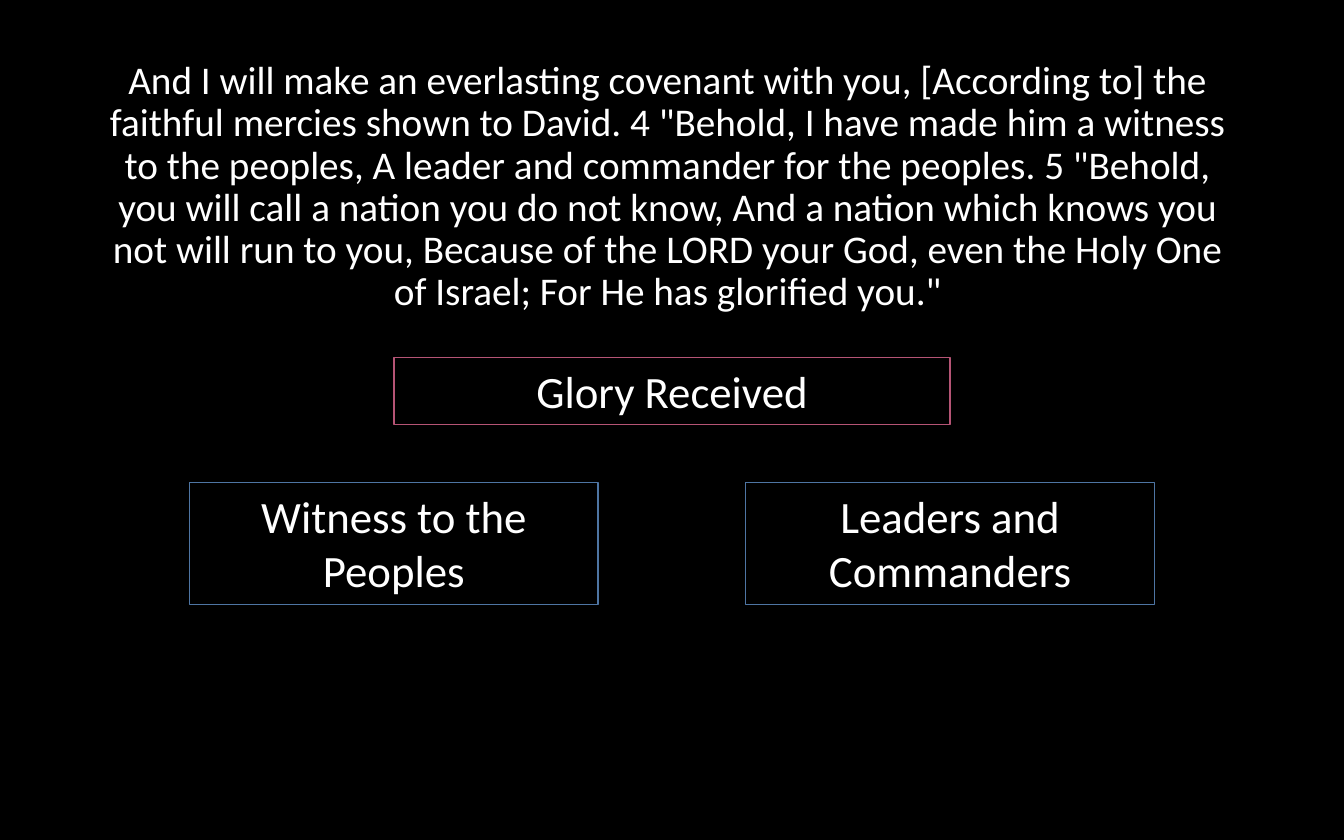
from pptx import Presentation
from pptx.dml.color import RGBColor
from pptx.enum.shapes import MSO_SHAPE
from pptx.enum.text import MSO_ANCHOR, MSO_AUTO_SIZE, PP_ALIGN
from pptx.oxml.ns import qn
from pptx.util import Pt

HUES = {"back": "000000", "text": "FFFFFF", "rose": "B55475", "blue": "4E75A3"}
WIDE, HIGH = 720, 450


def hue(name):
    return RGBColor.from_string(HUES[name])


def style(frame, size):
    """Format the centred white text of a frame."""
    frame.word_wrap = True
    frame.auto_size = MSO_AUTO_SIZE.NONE
    frame.vertical_anchor = MSO_ANCHOR.TOP
    for para in frame.paragraphs:
        para.alignment = PP_ALIGN.CENTER
        for run in para.runs:
            run.font.name = "Calibri"
            run.font.size = Pt(size)
            run.font.color.rgb = hue("text")


def add_verse(slide, text, left, top, width, height):
    """Place the scripture in the body placeholder."""
    body = slide.placeholders[1]
    body.left, body.top = Pt(left), Pt(top)
    body.width, body.height = Pt(width), Pt(height)
    body.text_frame.text = text
    para = body.text_frame.paragraphs[0]
    props = para._p.get_or_add_pPr()
    props.set("marL", "0")
    props.set("indent", "0")
    props.append(props.makeelement(qn("a:buNone"), {}))
    para.line_spacing = 0.9
    para.space_before = Pt(0)
    style(body.text_frame, 21)


def add_label(slide, text, edge, left, top, width, height):
    """Draw one outlined label."""
    box = slide.shapes.add_shape(
        MSO_SHAPE.RECTANGLE, Pt(left), Pt(top), Pt(width), Pt(height))
    box.shadow.inherit = False
    box.fill.background()
    box.line.color.rgb = hue(edge)
    box.line.width = Pt(0.75)
    box.text_frame.text = text
    style(box.text_frame, 24)


def add_row(slide, texts, edge, top, width, height, gap=0):
    """Centre a row of equal labels on the slide."""
    left = (WIDE - len(texts) * width - (len(texts) - 1) * gap) / 2
    for i, text in enumerate(texts):
        add_label(slide, text, edge, left + i * (width + gap), top, width, height)


def main():
    deck = Presentation()
    deck.slide_width, deck.slide_height = Pt(WIDE), Pt(HIGH)
    slide = deck.slides.add_slide(deck.slide_layouts[1])
    slide.background.fill.solid()
    slide.background.fill.fore_color.rgb = hue("back")

    # The slide has no title
    title = slide.shapes.title.element
    title.getparent().remove(title)

    # Scripture
    add_verse(
        slide,
        "And I will make an everlasting covenant with you, [According to] the "
        "faithful mercies shown to David. 4 \"Behold, I have made him a witness "
        "to the peoples, A leader and commander for the peoples. 5 \"Behold, "
        "you will call a nation you do not know, And a nation which knows you "
        "not will run to you, Because of the LORD your God, even the Holy One "
        "of Israel; For He has glorified you.\"",
        47.5, 28.8, 620.6, 147)

    # Main theme and its two parts
    add_row(slide, ["Glory Received"], "rose", 191.5, 298, 36)
    add_row(slide, ["Witness to the Peoples", "Leaders and Commanders"],
            "blue", 258.5, 219, 65.5, gap=79)

    deck.save("out.pptx")


if __name__ == "__main__":
    main()
